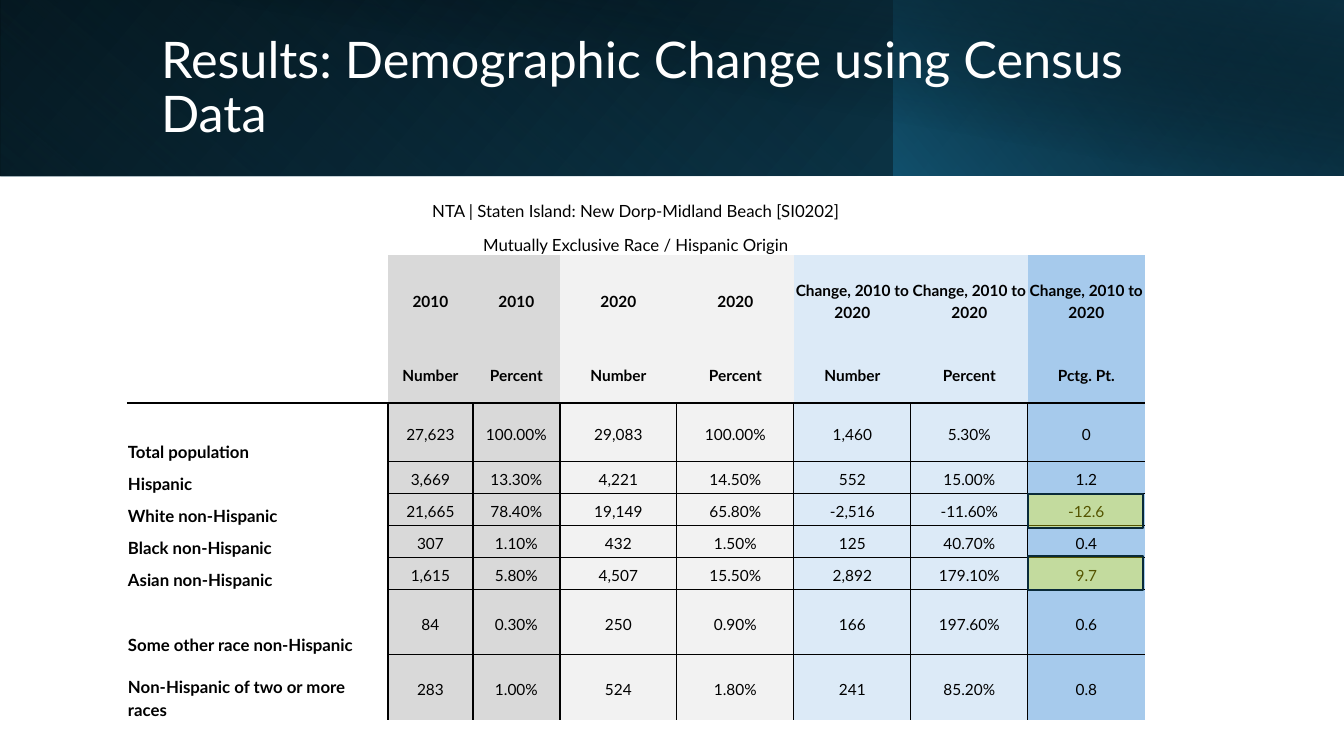
from itertools import accumulate

from lxml import etree
from pptx import Presentation
from pptx import util as u
from pptx.dml.color import RGBColor
from pptx.enum import shapes, text
from pptx.oxml.ns import qn

SCALE = 914400 / 100.8
WIDE, HIGH = 1344, 756
HUES = {
    "black": "000000", "white": "FFFFFF", "deep": "104862", "teal": "156082",
    "navy": "0B3041", "edge": "092A39", "yellow": "FFFF00",
    "gray": "D9D9D9", "pale": "F2F2F2", "ice": "DCEAF7", "sky": "A6CAEC",
}
MID, LOW = text.MSO_ANCHOR.MIDDLE, text.MSO_ANCHOR.BOTTOM
LEFT, MIDST = text.PP_ALIGN.LEFT, text.PP_ALIGN.CENTER

COLS = [261, 85, 87] + [117] * 5
ROWS = [80, 89, 59, 59] + [32] * 4 + [65] * 2
BANDS = [None, "gray", "gray", "pale", "pale", "ice", "ice", "sky"]
CAPTION = ["NTA | Staten Island: New Dorp-Midland Beach [SI0202]",
           "Mutually Exclusive Race / Hispanic Origin"]
HEADS = [
    ["", "2010", "2010", "2020", "2020"] + ["Change, 2010 to 2020"] * 3,
    [""] + ["Number", "Percent"] * 3 + ["Pctg. Pt."],
]
DATA = [
    ["Total population", "27,623", "100.00%", "29,083", "100.00%", "1,460", "5.30%", "0"],
    ["Hispanic", "3,669", "13.30%", "4,221", "14.50%", "552", "15.00%", "1.2"],
    ["White non-Hispanic", "21,665", "78.40%", "19,149", "65.80%", "-2,516", "-11.60%", "-12.6"],
    ["Black non-Hispanic", "307", "1.10%", "432", "1.50%", "125", "40.70%", "0.4"],
    ["Asian non-Hispanic", "1,615", "5.80%", "4,507", "15.50%", "2,892", "179.10%", "9.7"],
    ["Some other race non-Hispanic", "84", "0.30%", "250", "0.90%", "166", "197.60%", "0.6"],
    ["Non-Hispanic of two or more races", "283", "1.00%", "524", "1.80%", "241", "85.20%", "0.8"],
]


def px(n):
    return u.Emu(round(n * SCALE))


def rgb(name):
    return RGBColor.from_string(HUES[name])


def node(parent, tag, **attrs):
    return etree.SubElement(parent, qn(tag), {k: str(v) for k, v in attrs.items()})


def write(frame, lines, size=11, bold=False, hue="black", align=MIDST, space=1.15, after=8):
    frame.word_wrap = True
    for i, line in enumerate(lines):
        para = frame.paragraphs[0] if i == 0 else frame.add_paragraph()
        para.alignment, para.line_spacing = align, space
        para.space_before, para.space_after = u.Pt(0), u.Pt(after)
        run = para.add_run()
        run.text = line
        font = run.font
        font.name, font.size, font.bold = "Lato", u.Pt(size), bold
        font.color.rgb = rgb(hue)


def rect(slide, box):
    shape = slide.shapes.add_shape(shapes.MSO_SHAPE.RECTANGLE, *map(px, box))
    shape.shadow.inherit = False
    return shape


def shade(slide, box, stops, angle, flip=True, turn=0):
    shape = rect(slide, box)
    shape.line.fill.background()
    shape.rotation = turn
    props = shape._element.spPr
    if flip:
        props.find(qn("a:xfrm")).set("flipH", "1")
    grad = etree.Element(qn("a:gradFill"), rotWithShape="1")
    steps = node(grad, "a:gsLst")
    for pos, hue, alpha in stops:
        stop = node(steps, "a:gs", pos=pos * 1000)
        node(node(stop, "a:srgbClr", val=HUES[hue]), "a:alpha", val=alpha * 1000)
    node(grad, "a:lin", ang=angle * 60000, scaled=0)
    props.find(qn("a:prstGeom")).addnext(grad)


def banner(slide, box, words):
    x, y, w, h = box
    # Layered gradients
    shade(slide, (x, y, w, h), [(0, "black", 100), (100, "deep", 100)], 140)
    shade(slide, (x, y, 895, h), [(20, "teal", 0), (100, "navy", 55)], 230, turn=180)
    shade(slide, (x + 894, y, w - 894, h), [(0, "teal", 66), (100, "black", 30)], 220)
    shade(slide, (x + 50, y, w - 50, h), [(50, "black", 0), (99, "navy", 52)], 280, flip=False)
    # Title, brought in front of the gradients
    title = slide.shapes.title
    title.left, title.top, title.width, title.height = map(px, (x + 151, y + 32, 1091, 114))
    frame = title.text_frame
    frame.auto_size = text.MSO_AUTO_SIZE.NONE
    frame.vertical_anchor = MID
    write(frame, [words], size=36, hue="white", align=LEFT, space=0.9, after=0)
    slide.shapes._spTree.append(title._element)


def sides(row, col):
    """Return the sides of a cell that carry a rule."""
    if row < 2:
        return ""
    if row == 2:
        return "B"
    if col == 0:
        return "RT" if row == 3 else "R"
    return "LT" + "R" * (col < len(COLS) - 1) + "B" * (row < len(ROWS) - 1)


def dress(cell, row, col):
    cell.margin_left = cell.margin_right = cell.margin_top = px(1)
    cell.margin_bottom = 0
    cell.vertical_anchor = LOW if row == 0 or (col == 0 and row > 2) else MID
    props = cell._tc.get_or_add_tcPr()
    for side in "LRTB":
        line = node(props, "a:ln" + side, w=12700)
        if side in sides(row, col):
            node(node(line, "a:solidFill"), "a:srgbClr", val=HUES["black"])
        else:
            node(line, "a:noFill")
    if row and BANDS[col]:
        cell.fill.solid()
        cell.fill.fore_color.rgb = rgb(BANDS[col])
    else:
        cell.fill.background()


def census(slide, box):
    x, y, w, h = box
    grid = slide.shapes.add_table(len(ROWS), len(COLS), *map(px, box)).table
    grid.first_row = grid.horz_banding = False
    for col, size in zip(grid.columns, COLS):
        col.width = px(size)
    for row, size in zip(grid.rows, ROWS):
        row.height = px(size)
    for r in range(len(ROWS)):
        for c in range(len(COLS)):
            dress(grid.cell(r, c), r, c)
    # Caption across all columns
    grid.cell(0, 0).merge(grid.cell(0, len(COLS) - 1))
    write(grid.cell(0, 0).text_frame, CAPTION, size=12)
    # Heads and figures
    for r, row in enumerate(HEADS + DATA, 1):
        for c, word in enumerate(row):
            if word:
                label = c == 0
                write(grid.cell(r, c).text_frame, [word], size=12 if label else 11,
                      bold=label or r < 3, align=LEFT if label else MIDST)
    # Marks on the largest shifts
    tops = [0, *accumulate(ROWS)]
    for r, lift in ((5, 0), (7, 2)):
        mark(slide, (x + w - COLS[-1], y + tops[r] - lift, 115, 34))


def mark(slide, box):
    shape = rect(slide, box)
    shape.fill.solid()
    shape.fill.fore_color.rgb = rgb("yellow")
    tint = shape._element.spPr.find(qn("a:solidFill"))[0]
    node(tint, "a:alpha", val=33000)
    shape.line.color.rgb = rgb("edge")
    shape.line.width = u.Pt(1.5)


def main():
    deck = Presentation()
    deck.slide_width, deck.slide_height = px(WIDE), px(HIGH)
    slide = deck.slides.add_slide(deck.slide_layouts[5])
    banner(slide, (0, 0, WIDE, 176), "Results: Demographic Change using Census Data")
    census(slide, (127, 175, sum(COLS), sum(ROWS)))
    deck.save("out.pptx")


if __name__ == "__main__":
    main()
